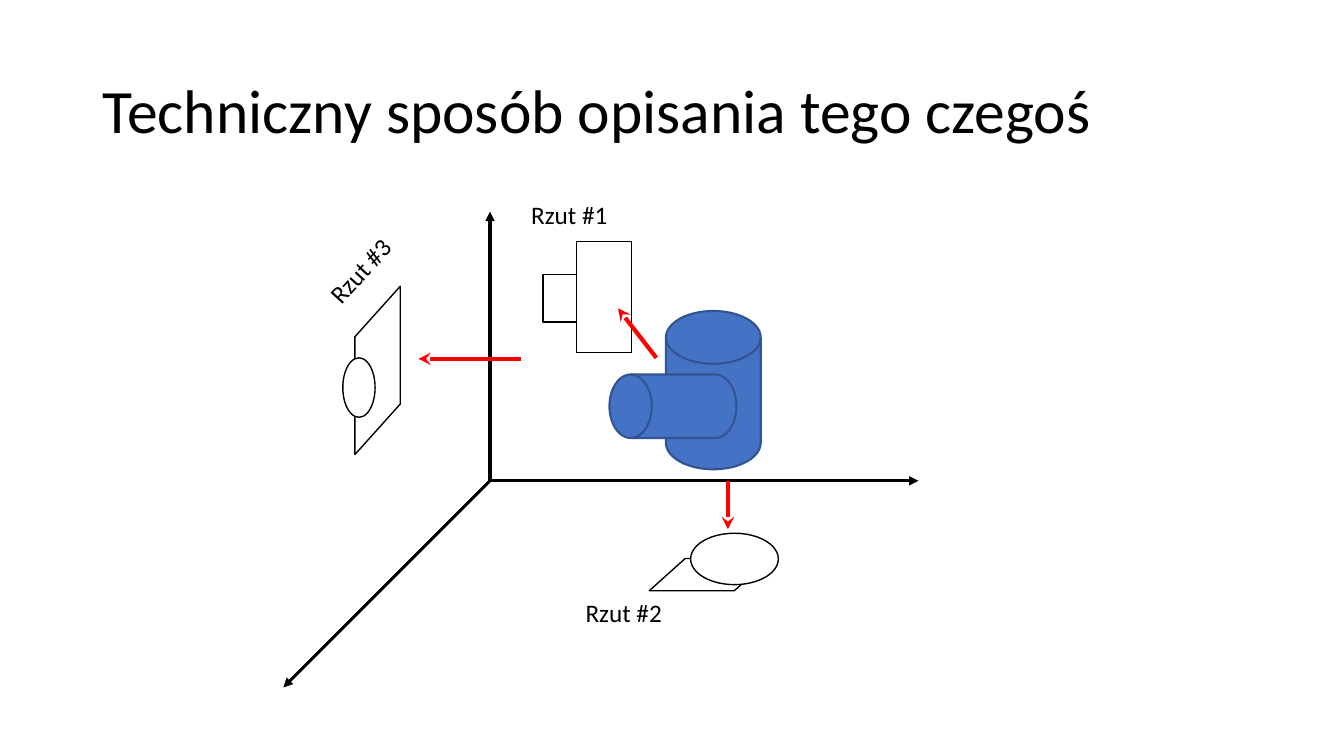
from dataclasses import dataclass

from lxml.etree import SubElement
from pptx import Presentation
from pptx.dml.color import RGBColor
from pptx.enum.shapes import MSO_CONNECTOR, MSO_SHAPE
from pptx.enum.text import MSO_ANCHOR, MSO_AUTO_SIZE
from pptx.oxml.ns import qn
from pptx.util import Inches, Pt


@dataclass(frozen=True)
class Theme:
    font: str = "Calibri"
    ink: RGBColor = RGBColor(0, 0, 0)
    paper: RGBColor = RGBColor(255, 255, 255)
    solid: RGBColor = RGBColor(0x44, 0x72, 0xC4)
    solid_edge: RGBColor = RGBColor(0x32, 0x54, 0x91)
    ray: RGBColor = RGBColor(255, 0, 0)
    title_size: int = 44
    label_size: int = 18
    outline: float = 1
    solid_outline: float = 1.5
    axis: float = 2.25
    ray_width: float = 3


class Sketch:
    def __init__(self, slide, theme):
        self.slide = slide
        self.theme = theme

    def text(self, words, box, size, rotation=0):
        tb = self.slide.shapes.add_textbox(*map(Inches, box))
        tb.rotation = rotation
        tf = tb.text_frame
        tf.word_wrap = True
        r = tf.paragraphs[0].add_run()
        r.text = words
        r.font.name = self.theme.font
        r.font.size = Pt(size)
        r.font.color.rgb = self.theme.ink
        return tf

    def title(self, words, box):
        tf = self.text(words, box, self.theme.title_size)
        tf.vertical_anchor = MSO_ANCHOR.MIDDLE
        tf.paragraphs[0].line_spacing = 0.9

    def label(self, words, box, rotation=0):
        tf = self.text(words, box, self.theme.label_size, rotation)
        tf.auto_size = MSO_AUTO_SIZE.SHAPE_TO_FIT_TEXT

    def group(self):
        return self.slide.shapes.add_group_shape().shapes

    def shape(self, kind, box, fill, edge, width, rotation=0, shapes=None):
        shapes = self.slide.shapes if shapes is None else shapes
        sp = shapes.add_shape(kind, *map(Inches, box))
        sp.rotation = rotation
        sp.shadow.inherit = False
        sp.fill.solid()
        sp.fill.fore_color.rgb = fill
        sp.line.color.rgb = edge
        sp.line.width = Pt(width)
        return sp

    def view(self, kind, box, rotation=0, shapes=None):
        """Draw a flat outlined part of a projection."""
        t = self.theme
        return self.shape(kind, box, t.paper, t.ink, t.outline, rotation, shapes)

    def slanted_view(self, box, rotation=0, flip=False):
        sp = self.view(MSO_SHAPE.PARALLELOGRAM, box, rotation)
        sp.adjustments[0] = 1.114
        if flip:
            sp.element.spPr.get_or_add_xfrm().set("flipV", "1")

    def cylinder(self, kind, box, shapes):
        t = self.theme
        self.shape(kind, box, t.solid, t.solid_edge, t.solid_outline, 270, shapes)

    def arrow(self, start, end, color, width, head):
        cx = self.slide.shapes.add_connector(
            MSO_CONNECTOR.STRAIGHT, *map(Inches, (*start, *end)))
        cx.line.color.rgb = color
        cx.line.width = Pt(width)
        SubElement(cx.line._get_or_add_ln(), qn("a:tailEnd"), type=head)
        SubElement(cx.element.spPr, qn("a:effectLst"))

    def axis(self, start, end):
        self.arrow(start, end, self.theme.ink, self.theme.axis, "triangle")

    def ray(self, start, end):
        self.arrow(start, end, self.theme.ray, self.theme.ray_width, "stealth")


def main():
    prs = Presentation()
    prs.slide_width, prs.slide_height = Inches(13.33), Inches(7.5)
    s = Sketch(prs.slides.add_slide(prs.slide_layouts[6]), Theme())

    s.title("Techniczny sposób opisania tego czegoś", (0.92, 0.4, 11.5, 1.45))

    origin = (4.86, 4.77)
    for tip in ((9.11, 4.77), (4.86, 2.1), (2.81, 6.82)):
        s.axis(origin, tip)

    back_view = s.group()
    for box in ((5.39, 2.72, 0.47, 0.48), (5.44, 2.67, 1.1, 0.55)):
        s.view(MSO_SHAPE.RECTANGLE, box, 270, back_view)

    s.slanted_view((2.91, 3.45, 1.67, 0.45), 90, flip=True)
    s.view(MSO_SHAPE.OVAL, (3.4, 3.55, 0.32, 0.59))

    s.label("Rzut #1", (5.17, 1.93, 5.27, 0.4))
    s.label("Rzut #3", (2.98, 2.23, 1.65, 0.4), 312.5)
    s.label("Rzut #2", (5.71, 5.88, 2.73, 0.4))

    s.slanted_view((6.44, 5.54, 1.2, 0.32))

    solid = s.group()
    s.cylinder(MSO_SHAPE.FLOWCHART_DIRECT_ACCESS_STORAGE,
               (6.29, 3.4, 1.57, 0.94), solid)
    s.cylinder(MSO_SHAPE.FLOWCHART_MAGNETIC_DISK,
               (6.36, 3.4, 0.63, 1.26), solid)

    s.ray((6.51, 3.55), (6.13, 3.06))
    s.ray((5.17, 3.56), (4.15, 3.56))
    s.view(MSO_SHAPE.OVAL, (6.85, 5.29, 0.87, 0.51))
    s.ray((7.22, 4.77), (7.22, 5.25))

    prs.save("out.pptx")


if __name__ == "__main__":
    main()
